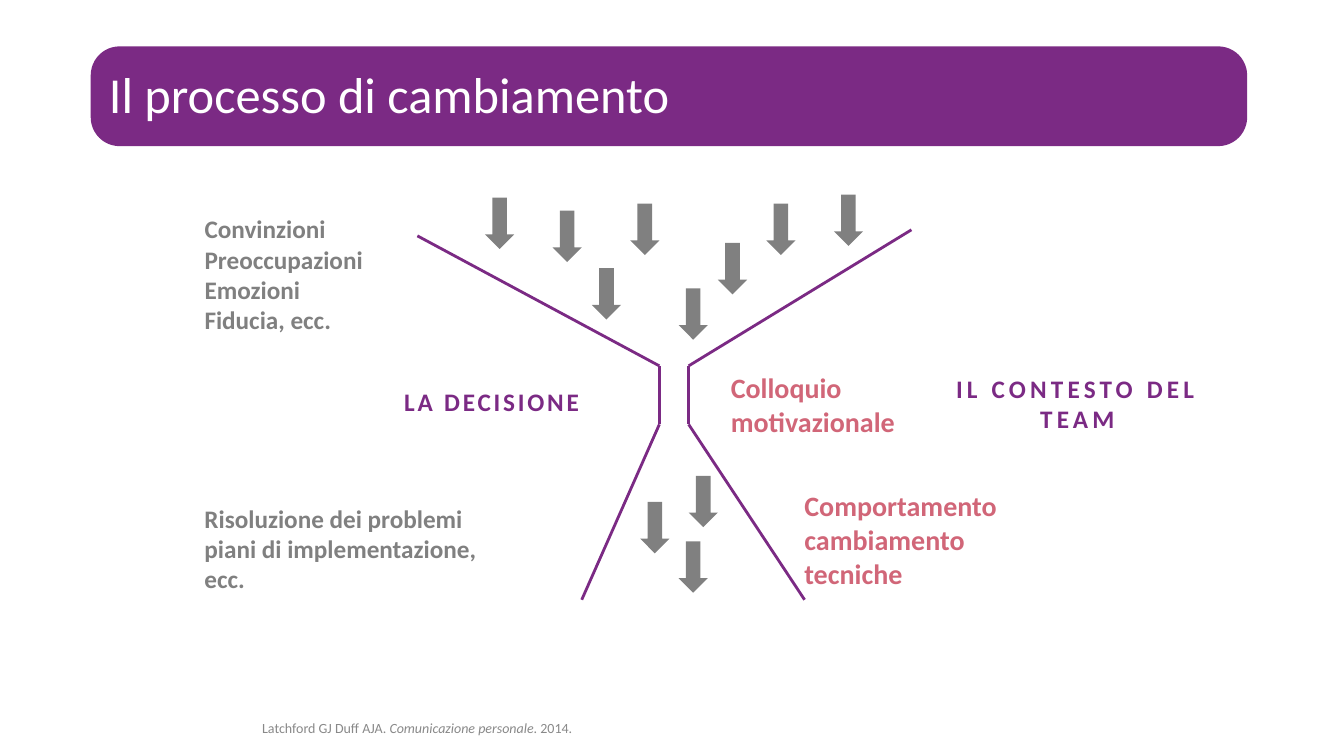
from dataclasses import dataclass
from itertools import pairwise

from pptx import Presentation
from pptx import util as u
from pptx.dml.color import RGBColor
from pptx.enum import shapes, text
from pptx.oxml.ns import qn

EMU_PER_PX = 9144  # 100 px to the inch
FONT = "Calibri"
COLORS = {"purple": "7B2A84", "pink": "D16678", "gray": "808080",
          "source": "898989", "white": "FFFFFF"}


@dataclass
class Label:
    x: int
    y: int
    w: int
    h: int
    lines: list[str]
    size: int
    color: str
    bold: bool = True
    spacing: int = 0  # between letters, in points
    align: text.PP_ALIGN = text.PP_ALIGN.LEFT
    anchor: text.MSO_ANCHOR = text.MSO_ANCHOR.TOP
    inset: bool = True
    line_spacing: float = 1.0


def px(n: int) -> u.Emu:
    return u.Emu(n * EMU_PER_PX)


def rgb(name: str) -> RGBColor:
    return RGBColor.from_string(COLORS[name])


def add_block(slide, kind: shapes.MSO_SHAPE, x: int, y: int, w: int, h: int, color: str):
    sp = slide.shapes.add_shape(kind, px(x), px(y), px(w), px(h))
    sp.shadow.inherit = False
    sp.fill.solid()
    sp.fill.fore_color.rgb = rgb(color)
    sp.line.fill.background()
    return sp


def add_label(slide, label: Label):
    sp = slide.shapes.add_textbox(px(label.x), px(label.y), px(label.w), px(label.h))
    tf = sp.text_frame
    tf.word_wrap = True
    tf.vertical_anchor = label.anchor
    if label.inset:
        tf.auto_size = text.MSO_AUTO_SIZE.SHAPE_TO_FIT_TEXT
    else:
        tf.margin_left = tf.margin_top = tf.margin_right = tf.margin_bottom = 0
    tf.text = "\n".join(label.lines)
    for p in tf.paragraphs:
        p.alignment = label.align
        p.line_spacing = label.line_spacing
        p.font.name = FONT
        p.font.size = u.Pt(label.size)
        p.font.bold = label.bold
        p.font.color.rgb = rgb(label.color)
        if label.spacing:
            p._p.pPr.find(qn("a:defRPr")).set("spc", str(label.spacing * 100))
    return sp


def add_wall(slide, points: list[tuple[int, int]]) -> None:
    for (x1, y1), (x2, y2) in pairwise(points):
        line = slide.shapes.add_connector(
            shapes.MSO_CONNECTOR.STRAIGHT, px(x1), px(y1), px(x2), px(y2))
        line.line.color.rgb = rgb("purple")
        line.line.width = u.Pt(2)
        sp_pr = line._element.spPr
        sp_pr.append(sp_pr.makeelement(qn("a:effectLst"), {}))


TITLE = Label(108, 62, 1118, 72, ["Il processo di cambiamento"], 36, "white", bold=False,
              anchor=text.MSO_ANCHOR.MIDDLE, inset=False, line_spacing=0.8)
SOURCE = Label(260, 646, 982, 85, ["Latchford GJ Duff AJA. "], 10, "source", bold=False,
               anchor=text.MSO_ANCHOR.BOTTOM, inset=False, line_spacing=0.9)
LABELS = [
    Label(715, 363, 200, 77, ["Colloquio motivazionale"], 20, "pink"),
    Label(391, 378, 241, 40, ["LA DECISIONE"], 18, "purple", spacing=2),
    Label(788, 480, 297, 110, ["Comportamento", "cambiamento", "tecniche"], 20, "pink"),
    Label(193, 494, 316, 100,
          ["Risoluzione dei problemi", "piani di implementazione, ecc."], 18, "gray"),
    Label(193, 207, 318, 130,
          ["Convinzioni", "Preoccupazioni", "Emozioni", "Fiducia, ecc."], 18, "gray"),
    Label(933, 365, 271, 70, ["IL CONTESTO DEL TEAM"], 18, "purple", spacing=3,
          align=text.PP_ALIGN.CENTER),
]
WALLS = [
    [(414, 234), (654, 363), (654, 421), (577, 595)],
    [(904, 228), (683, 363), (683, 421), (798, 595)],
]
ARROW_W, ARROW_H = 29, 51
ARROWS = [(481, 196), (548, 209), (587, 266), (625, 202), (673, 286), (760, 202),
          (712, 241), (827, 193), (635, 498), (673, 537), (683, 472)]


def main() -> None:
    prs = Presentation()
    prs.slide_width, prs.slide_height = px(1333), px(750)
    s = prs.slides.add_slide(prs.slide_layouts[6])

    # Title banner
    banner = add_block(s, shapes.MSO_SHAPE.ROUNDED_RECTANGLE, 90, 46, 1147, 99, "purple")
    banner.adjustments[0] = 0.29
    add_label(s, TITLE)

    # Citation, with the title of the work in italics
    p = add_label(s, SOURCE).text_frame.paragraphs[0]
    r = p.add_run()
    r.text = "Comunicazione personale"
    r.font.italic = True
    p.add_run().text = ". 2014."

    # Funnel and the arrows passing through it
    for wall in WALLS:
        add_wall(s, wall)
    for x, y in ARROWS:
        add_block(s, shapes.MSO_SHAPE.DOWN_ARROW, x, y, ARROW_W, ARROW_H, "gray")

    # Labels around the funnel
    for label in LABELS:
        add_label(s, label)

    prs.save("out.pptx")


if __name__ == "__main__":
    main()
